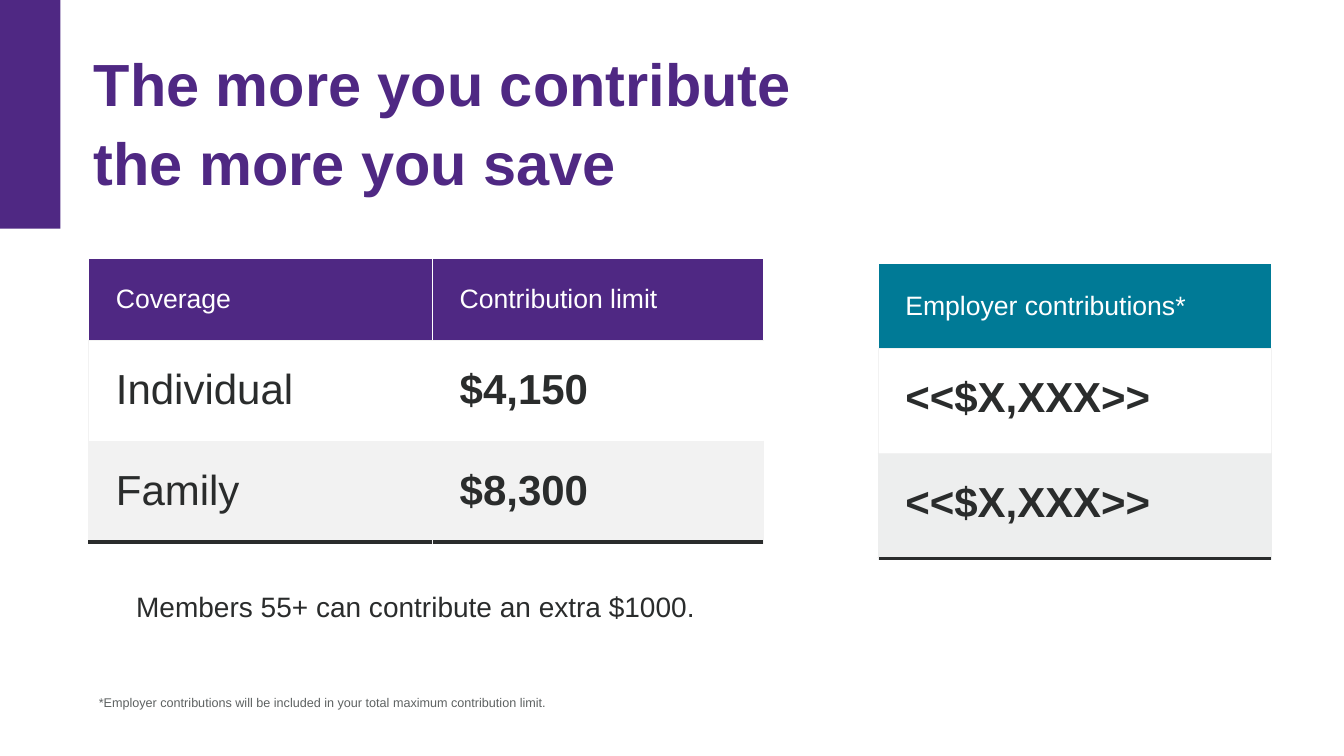
from lxml.etree import SubElement
from pptx import Presentation
from pptx.dml.color import RGBColor
from pptx.enum.shapes import MSO_SHAPE
from pptx.enum.text import MSO_ANCHOR, PP_ALIGN
from pptx.oxml.ns import qn
from pptx.util import Inches, Pt

PURPLE = RGBColor(0x4F, 0x28, 0x83)
TEAL = RGBColor(0x00, 0x7A, 0x96)
INK = RGBColor(0x2A, 0x2C, 0x2C)
GREY = RGBColor(0x5E, 0x62, 0x62)
LIGHT = RGBColor(0xF2, 0xF2, 0xF2)
MIST = RGBColor(0xED, 0xEE, 0xEE)
WHITE = RGBColor(0xFF, 0xFF, 0xFF)


class SlideBuilder:
    """Holds the slide and its text style, and adds each kind of element."""

    font = "Arial"

    def __init__(self, prs):
        self.slide = prs.slides.add_slide(prs.slide_layouts[5])

    def fill_frame(self, tf, text, size, color, bold=False, insets=(0, 0, 0, 0)):
        tf.word_wrap = True
        tf.margin_left, tf.margin_top, tf.margin_right, tf.margin_bottom = map(Inches, insets)
        tf.vertical_anchor = MSO_ANCHOR.TOP
        return self.add_run(tf.paragraphs[0], text, size, color, bold)

    def add_run(self, p, text, size, color, bold):
        p.alignment = PP_ALIGN.LEFT
        r = p.add_run()
        r.text = text
        r.font.name, r.font.size, r.font.bold = self.font, Pt(size), bold
        r.font.color.rgb = color
        return p

    def title(self, text, box):
        sp = self.slide.shapes.title
        sp.left, sp.top, sp.width, sp.height = map(Inches, box)
        self.fill_frame(sp.text_frame, text, 42.5, PURPLE, True).line_spacing = 1.1

    def bar(self, box, color):
        sp = self.slide.shapes.add_shape(MSO_SHAPE.RECTANGLE, *map(Inches, box))
        sp.shadow.inherit = False
        sp.fill.solid()
        sp.fill.fore_color.rgb = color
        sp.line.fill.background()

    def text(self, text, box, size, color, insets):
        tf = self.slide.shapes.add_textbox(*map(Inches, box)).text_frame
        return self.fill_frame(tf, text, size, color, insets=insets)

    def border(self, cell, side, color, width):
        ln = SubElement(cell._tc.get_or_add_tcPr(), qn(f"a:ln{side}"), w=str(Pt(width)))
        SubElement(SubElement(ln, qn("a:solidFill")), qn("a:srgbClr"), val=str(color))

    def table(self, rows, left, top, widths, heights, head, band, bold_col):
        frame = self.slide.shapes.add_table(
            len(rows), len(widths), Inches(left), Inches(top),
            Inches(sum(widths)), Inches(sum(heights)))
        table = frame.table
        for col, width in zip(table.columns, widths):
            col.width = Inches(width)
        for row, height in zip(table.rows, heights):
            row.height = Inches(height)
        fills = (head, WHITE, band)
        edges = (WHITE, LIGHT, band)
        for i, row in enumerate(rows):
            last = i == len(rows) - 1
            for j, text in enumerate(row):
                cell = table.cell(i, j)
                inner = WHITE if i == 1 and len(row) > 1 else edges[i]
                self.border(cell, "L", inner if j else edges[i], 1)
                self.border(cell, "R", inner, 1)
                self.border(cell, "T", LIGHT if i else WHITE, 1)
                self.border(cell, "B", INK if last else LIGHT, 3 if last else 1)
                cell.fill.solid()
                cell.fill.fore_color.rgb = fills[i]
                cell.margin_left = cell.margin_right = Inches(0.27)
                cell.margin_top = cell.margin_bottom = Inches(0.26)
                cell.vertical_anchor = MSO_ANCHOR.TOP if i else MSO_ANCHOR.MIDDLE
                self.add_run(cell.text_frame.paragraphs[0], text, 30 if i else 19,
                             INK if i else WHITE, i > 0 and j == bold_col)


def main():
    prs = Presentation()
    prs.slide_width, prs.slide_height = Inches(13.33), Inches(7.5)
    page = SlideBuilder(prs)
    page.bar((0, 0, 0.6, 2.27), PURPLE)
    page.title("The more you contribute the more you save", (0.93, 0.4, 7.2, 1.53))
    page.table(
        [("Coverage", "Contribution limit"), ("Individual", "$4,150"), ("Family", "$8,300")],
        0.88, 2.56, (3.41, 3.28), (0.82, 1, 1), PURPLE, LIGHT, 1)
    page.text("*Employer contributions will be included in your total maximum contribution limit.",
              (0.85, 6.82, 11.62, 0.29), 9, GREY, (0.13, 0.07, 0.13, 0.07))
    page.table([("Employer contributions*",), ("<<$X,XXX>>",), ("<<$X,XXX>>",)],
               8.71, 2.61, (3.9,), (0.85, 1.04, 1.04), TEAL, MIST, 0)
    p = page.text("Members 55+ can contribute an extra $1000.",
                  (1.35, 5.73, 5.97, 0.47), 20, INK, (0, 0.05, 0.1, 0.05))
    p.line_spacing = 1.2
    prs.save("out.pptx")


if __name__ == "__main__":
    main()
